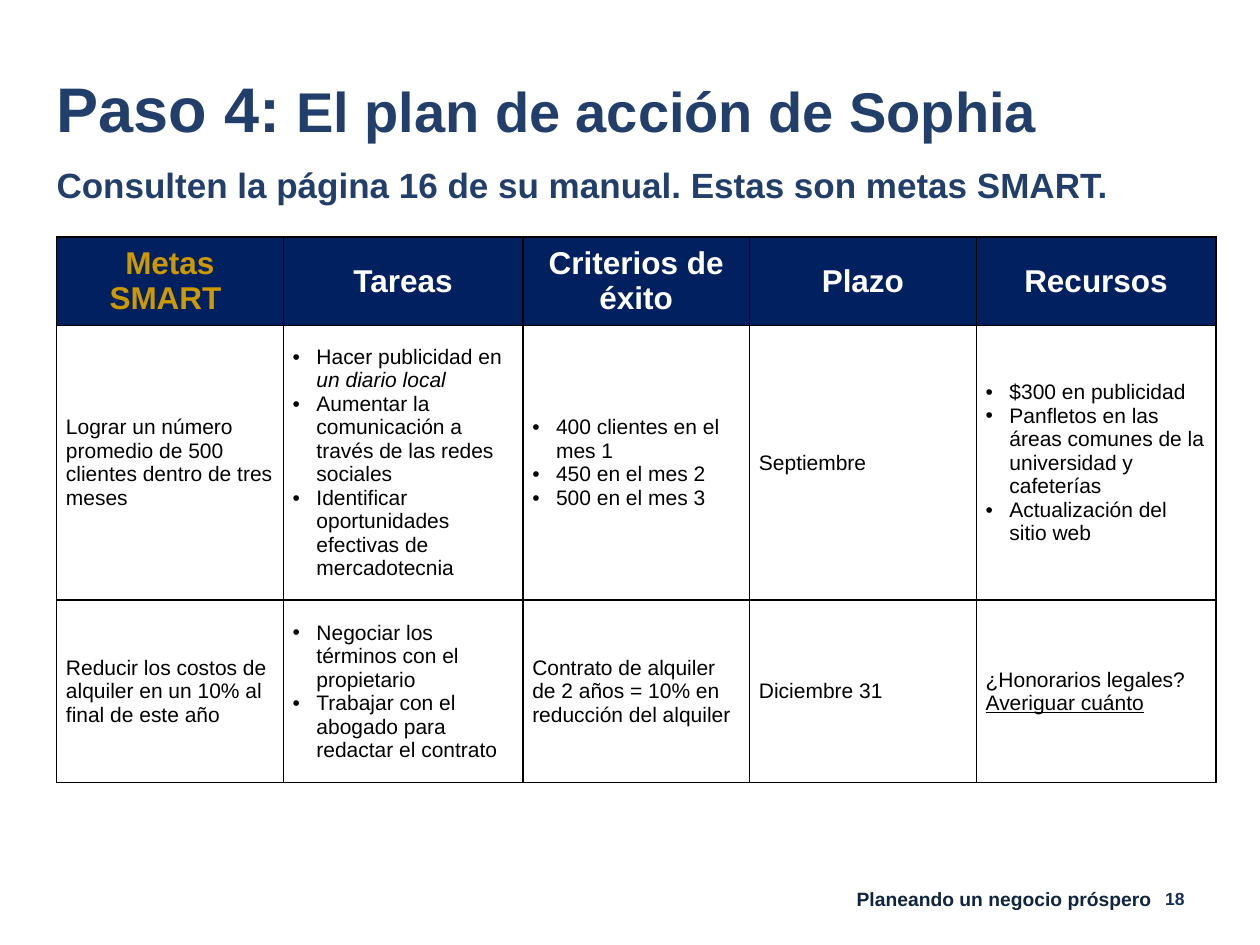
from dataclasses import dataclass

from lxml import etree
from pptx import Presentation
from pptx.dml.color import RGBColor
from pptx.enum import text
from pptx.oxml import ns
from pptx.util import Cm, Pt


@dataclass(frozen=True)
class Theme:
    font: str = "Arial"
    heading: str = "223F6B"
    header_fill: str = "002060"
    header_text: str = "FFFFFF"
    accent: str = "CC9900"
    body: str = "000000"
    footer: str = "0F243E"
    page_number: str = "132F5A"
    title_size: int = 36
    title_rest_size: int = 32
    subtitle_size: int = 20
    header_size: int = 18
    body_size: int = 12
    footer_size: int = 11
    number_size: int = 10


THEME = Theme()
LEFT, CENTER, RIGHT = (text.PP_ALIGN.LEFT, text.PP_ALIGN.CENTER, text.PP_ALIGN.RIGHT)


def add_run(paragraph, words, *, size, color, bold=False, italic=False, underline=False):
    run = paragraph.add_run()
    run.text = words
    font = run.font
    font.name, font.size = THEME.font, Pt(size)
    font.bold, font.italic, font.underline = bold, italic, underline
    font.color.rgb = RGBColor.from_string(color)


def add_bullet(paragraph, indent=Cm(0.48)):
    properties = paragraph._p.get_or_add_pPr()
    properties.set("marL", str(indent))
    properties.set("indent", str(-indent))
    font = etree.SubElement(properties, ns.qn("a:buFont"))
    font.set("typeface", THEME.font)
    etree.SubElement(properties, ns.qn("a:buChar")).set("char", "•")


def add_borders(cell, color="000000", width=Pt(1)):
    """Outline all four sides; call before the cell's fill is set."""
    properties = cell._tc.get_or_add_tcPr()
    for side in ("a:lnL", "a:lnR", "a:lnT", "a:lnB"):
        line = etree.SubElement(properties, ns.qn(side), w=str(width))
        fill = etree.SubElement(line, ns.qn("a:solidFill"))
        etree.SubElement(fill, ns.qn("a:srgbClr"), val=color)


class SlideBuilder:
    def __init__(self, slide, theme):
        self.slide = slide
        self.theme = theme

    def text_box(self, left, top, width, height, runs, *, align=LEFT,
                 anchor=text.MSO_ANCHOR.TOP, inset_top=0.13, inset_bottom=0.13):
        box = self.slide.shapes.add_textbox(Cm(left), Cm(top), Cm(width), Cm(height))
        frame = box.text_frame
        frame.word_wrap = True
        frame.vertical_anchor = anchor
        frame.margin_top, frame.margin_bottom = Cm(inset_top), Cm(inset_bottom)
        paragraph = frame.paragraphs[0]
        paragraph.alignment = align
        for words, style in runs:
            add_run(paragraph, words, bold=True, **style)

    def header_cell(self, cell, words, color):
        add_borders(cell)
        cell.fill.solid()
        cell.fill.fore_color.rgb = RGBColor.from_string(self.theme.header_fill)
        cell.vertical_anchor = text.MSO_ANCHOR.MIDDLE
        paragraph = cell.text_frame.paragraphs[0]
        paragraph.alignment = CENTER
        add_run(paragraph, words, size=self.theme.header_size, color=color, bold=True)

    def body_cell(self, cell, content):
        """A list becomes bullets; each item is a string or (words, style) runs."""
        add_borders(cell)
        cell.fill.background()
        cell.vertical_anchor = text.MSO_ANCHOR.MIDDLE
        cell.margin_left = cell.margin_right = Cm(0.19)
        cell.margin_top = cell.margin_bottom = 0
        bulleted = isinstance(content, list)
        frame = cell.text_frame
        for index, item in enumerate(content if bulleted else [content]):
            paragraph = frame.add_paragraph() if index else frame.paragraphs[0]
            if bulleted:
                add_bullet(paragraph)
            for words, style in ((item, {}),) if isinstance(item, str) else item:
                add_run(paragraph, words, size=self.theme.body_size,
                        color=self.theme.body, **style)

    def table(self, left, top, widths, heights, headers, rows):
        table = self.slide.shapes.add_table(
            len(heights), len(widths), Cm(left), Cm(top),
            Cm(sum(widths)), Cm(sum(heights))).table
        table.horz_banding = False
        for column, width in zip(table.columns, widths):
            column.width = Cm(width)
        for row, height in zip(table.rows, heights):
            row.height = Cm(height)
        for column, words in enumerate(headers):
            color = self.theme.header_text if column else self.theme.accent
            self.header_cell(table.cell(0, column), words, color)
        for row, contents in enumerate(rows, start=1):
            for column, content in enumerate(contents):
                self.body_cell(table.cell(row, column), content)


HEADERS = ["Metas SMART ", "Tareas", "Criterios de éxito", "Plazo", "Recursos"]
PLAN = [
    [
        "Lograr un número promedio de 500 clientes dentro de tres meses",
        [
            (("Hacer publicidad en ", {}), ("un diario local", {"italic": True})),
            "Aumentar la comunicación a través de las redes sociales",
            "Identificar oportunidades efectivas de mercadotecnia",
        ],
        ["400 clientes en el mes 1", "450 en el mes 2", "500 en el mes 3"],
        "Septiembre",
        [
            "$300 en publicidad",
            "Panfletos en las áreas comunes de la universidad y cafeterías",
            "Actualización del sitio web",
        ],
    ],
    [
        "Reducir los costos de alquiler en un 10% al final de este año",
        [
            "Negociar los términos con el propietario",
            "Trabajar con el abogado para redactar el contrato",
        ],
        "Contrato de alquiler de 2 años = 10% en reducción del alquiler",
        "Diciembre 31",
        (("¿Honorarios legales? ", {}), ("Averiguar cuánto", {"underline": True})),
    ],
]


def main():
    presentation = Presentation()
    presentation.slide_width, presentation.slide_height = Cm(25.4), Cm(19.05)
    slide = presentation.slides.add_slide(presentation.slide_layouts[6])
    builder = SlideBuilder(slide, THEME)

    builder.text_box(13.34, 17.75, 10.13, 0.74, [
        ("Planeando un negocio próspero",
         {"size": THEME.footer_size, "color": THEME.footer})], align=RIGHT)
    builder.text_box(23.06, 17.78, 1.07, 0.69, [
        ("18", {"size": THEME.number_size, "color": THEME.page_number})], align=RIGHT)
    builder.text_box(0.89, 1.22, 23.47, 1.7, [
        ("Paso 4:", {"size": THEME.title_size, "color": THEME.heading}),
        (" El plan de acción de Sophia",
         {"size": THEME.title_rest_size, "color": THEME.heading}),
    ], anchor=text.MSO_ANCHOR.BOTTOM, inset_bottom=0)
    builder.table(1.14, 4.78, [4.57, 4.83, 4.57, 4.57, 4.83], [1.63, 5.54, 3.68],
                  HEADERS, PLAN)
    builder.text_box(0.89, 3.1, 23.44, 1.12, [
        ("Consulten la página 16 de su manual. Estas son metas SMART.",
         {"size": THEME.subtitle_size, "color": THEME.heading})], inset_top=0.2)

    presentation.save("out.pptx")


if __name__ == "__main__":
    main()
